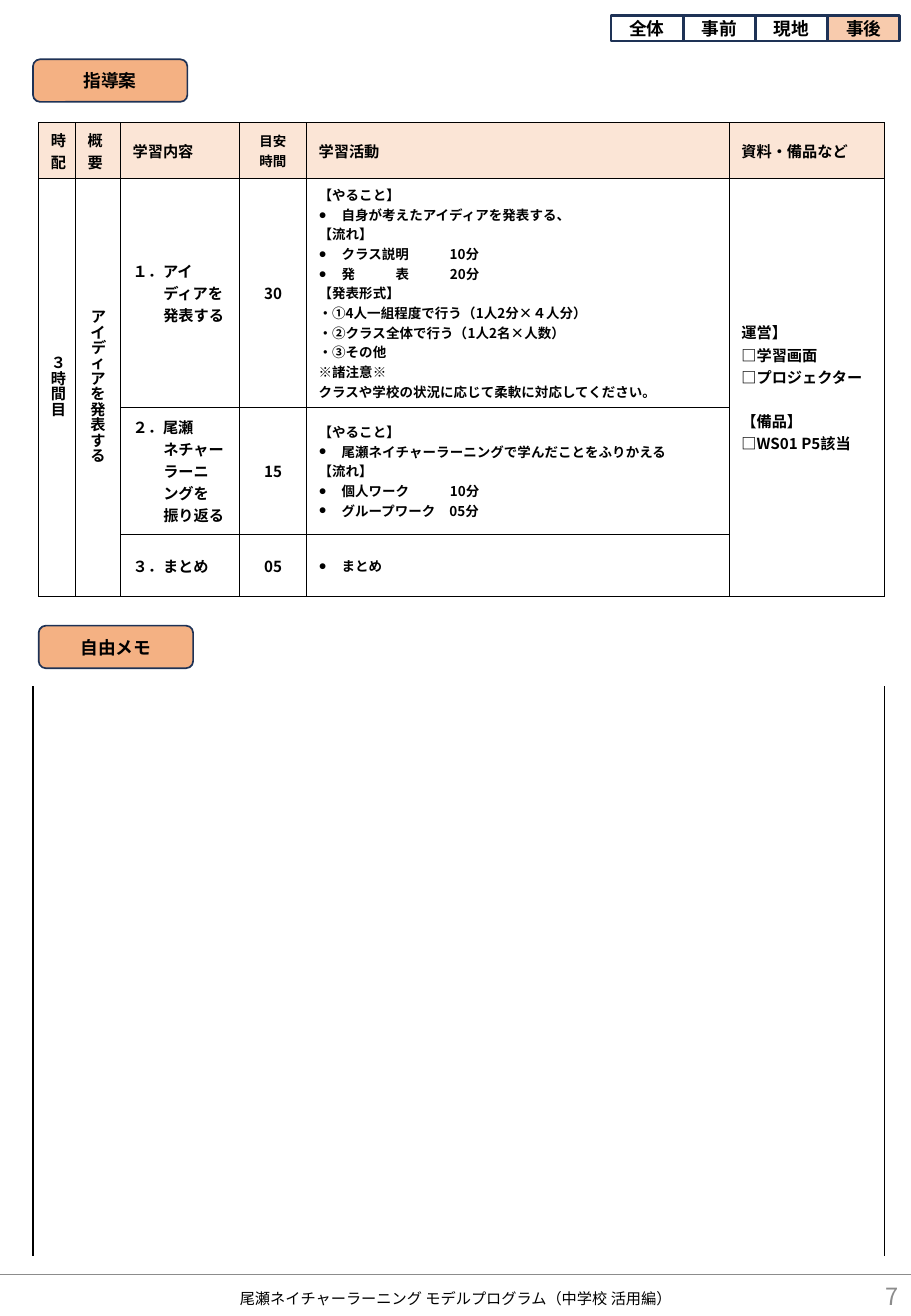
"""Lesson plan page with a schedule table and a free memo area."""
from pptx import Presentation
from pptx.dml.color import RGBColor
from pptx.enum.shapes import MSO_CONNECTOR, MSO_SHAPE
from pptx.enum.text import MSO_ANCHOR, PP_ALIGN
from pptx.oxml.ns import qn
from pptx.util import Cm, Pt
from lxml.etree import SubElement

FONT = "Noto Sans CJK JP"
COLORS = {"black": "000000", "white": "FFFFFF", "navy": "1E3256", "grey": "8C8C8C",
          "peach": "F8CBAD", "orange": "F4B183", "header": "FBE5D6"}
TIME_COLUMN = 8


def rgb(name):
    return RGBColor.from_string(COLORS[name])


def style(p, size, bold=True, align=PP_ALIGN.LEFT, color="black"):
    p.alignment = align
    for r in p.runs:
        r.font.size, r.font.bold, r.font.name = Pt(size), bold, FONT
        r.font.color.rgb = rgb(color)
        SubElement(r.font._element, qn("a:ea"), typeface=FONT)


prs = Presentation()
prs.slide_width, prs.slide_height = Cm(19.05), Cm(27.51)
s = prs.slides.add_slide(prs.slide_layouts[6])

rule = s.shapes.add_connector(MSO_CONNECTOR.STRAIGHT, 0, Cm(26.64), Cm(19.05), Cm(26.64))
rule.line.color.rgb = rgb("grey")
rule.line.width = Pt(0.5)
SubElement(rule._element.spPr, qn("a:effectLst"))

footers = [
    ("7", 14.76, 26.64, 4.29, 14, PP_ALIGN.RIGHT, "grey"),
    ("尾瀬ネイチャーラーニング モデルプログラム（中学校 活用編）",
     0, 26.7, 19.05, 9, PP_ALIGN.CENTER, "black"),
]
for text, x, y, w, size, align, color in footers:
    tf = s.shapes.add_textbox(Cm(x), Cm(y), Cm(w), Cm(0.89)).text_frame
    tf.word_wrap = True
    tf.vertical_anchor = MSO_ANCHOR.MIDDLE
    tf.text = text
    style(tf.paragraphs[0], size, False, align, color)

tabs = [("全体", "white"), ("事前", None), ("現地", None), ("事後", "peach")]
boxes = [(text, MSO_SHAPE.RECTANGLE, 12.78 + 1.51 * i, 0.33, 1.5, 0.53, fill, 1.5)
         for i, (text, fill) in enumerate(tabs)]
boxes += [("指導案", MSO_SHAPE.ROUNDED_RECTANGLE, 0.69, 1.24, 3.23, 0.89, "orange", 1),
          ("自由メモ", MSO_SHAPE.ROUNDED_RECTANGLE, 0.81, 13.08, 3.23, 0.89, "orange", 1)]
for text, kind, x, y, w, h, fill, line in boxes:
    sp = s.shapes.add_shape(kind, Cm(x), Cm(y), Cm(w), Cm(h))
    sp.shadow.inherit = False
    if fill:
        sp.fill.solid()
        sp.fill.fore_color.rgb = rgb(fill)
    else:
        sp.fill.background()
    sp.line.color.rgb = rgb("navy")
    sp.line.width = Pt(line)
    tf = sp.text_frame
    tf.vertical_anchor = MSO_ANCHOR.MIDDLE
    tf.text = text
    style(tf.paragraphs[0], 10.5, align=PP_ALIGN.CENTER)

rows = [
    [["時配"], ["概要"], ["学習内容"], ["目安", "時間"], ["学習活動"], ["資料・備品など"]],
    [["３時間目"], ["アイディアを発表する"], ["１．アイ", "ディアを", "発表する"], ["30"],
     ["【やること】", "●自身が考えたアイディアを発表する、", "【流れ】",
      "●クラス説明　10分", "●発　表　20分", "【発表形式】",
      "・①4人一組程度で行う（1人2分×４人分）", "・②クラス全体で行う（1人2名×人数）",
      "・③その他", "※諸注意※", "クラスや学校の状況に応じて柔軟に対応してください。"],
     ["運営】", "□学習画面", "□プロジェクター", "【備品】", "□WS01 P5該当"]],
    [[], [], ["２．尾瀬", "ネチャー", "ラーニ", "ングを", "振り返る"], ["15"],
     ["【やること】", "●尾瀬ネイチャーラーニングで学んだことをふりかえる", "【流れ】",
      "●個人ワーク　10分", "●グループワーク　05分"], []],
    [[], [], ["３．まとめ"], ["05"], ["●まとめ"], []],
]
heights = [1.17, 4.79, 2.65, 1.3]
plan = s.shapes.add_table(4, 6, Cm(0.81), Cm(2.56), Cm(17.69), Cm(sum(heights))).table
memo = s.shapes.add_table(1, 1, Cm(0.69), Cm(14.35), Cm(17.81), Cm(11.91)).table
for col, w in zip(plan.columns, [0.77, 0.94, 2.49, 1.4, 8.84, 3.25]):
    col.width = Cm(w)
for row, h in zip(plan.rows, heights):
    row.height = Cm(h)
for c in (0, 1, 5):
    plan.cell(1, c).merge(plan.cell(3, c))

for tbl, width, sides in ((plan, 0.5, "LRTB"), (memo, 1, "LR")):
    tbl.first_row = tbl.horz_banding = False
    for cell in tbl.iter_cells():
        tcPr = cell._tc.get_or_add_tcPr()
        for side in "LRTB":
            ln = SubElement(tcPr, qn("a:ln" + side), w=str(Pt(width)))
            if side in sides:
                fill = SubElement(ln, qn("a:solidFill"))
                SubElement(fill, qn("a:srgbClr"), val=COLORS["black"])
            else:
                SubElement(ln, qn("a:noFill"))
memo.cell(0, 0).fill.background()

for i, row in enumerate(rows):
    for c, lines in enumerate(row):
        cell = plan.cell(i, c)
        cell.fill.solid()
        cell.fill.fore_color.rgb = rgb("white" if i else "header")
        cell.vertical_anchor = MSO_ANCHOR.MIDDLE
        upright = i == 1 and c < 2
        if upright:
            cell._tc.get_or_add_tcPr().set("vert", "eaVert")
        size = 8 if (i == 0 and c == 3) or (i > 0 and c == 4) else 9
        align = PP_ALIGN.CENTER if upright or c == 3 else PP_ALIGN.LEFT
        tf = cell.text_frame
        for n, line in enumerate(lines):
            p = tf.add_paragraph() if n else tf.paragraphs[0]
            parts = line.lstrip("●").split("　")
            spare = TIME_COLUMN - sum(len(part) for part in parts[:-1])
            for k, part in enumerate(parts):
                if k:
                    gap = p.add_run()
                    gap.text = "　"
                    extra = spare / (len(parts) - 1) - 1
                    gap.font._element.set("spc", str(int(extra * size * 100)))
                p.add_run().text = part
            style(p, size, align=align)
            pPr = p._p.get_or_add_pPr()
            if upright:
                p.line_spacing = 0.7
            elif line.startswith("●"):
                pPr.set("marL", str(Cm(0.48)))
                pPr.set("indent", str(-Cm(0.48)))
                SubElement(pPr, qn("a:buFont"), typeface="Arial")
                SubElement(pPr, qn("a:buChar"), char="●")
            elif c == 2 and n:
                pPr.set("marL", str(Cm(0.64)))
            elif line == "【備品】":
                p.space_before = Pt(13)

prs.save("out.pptx")
